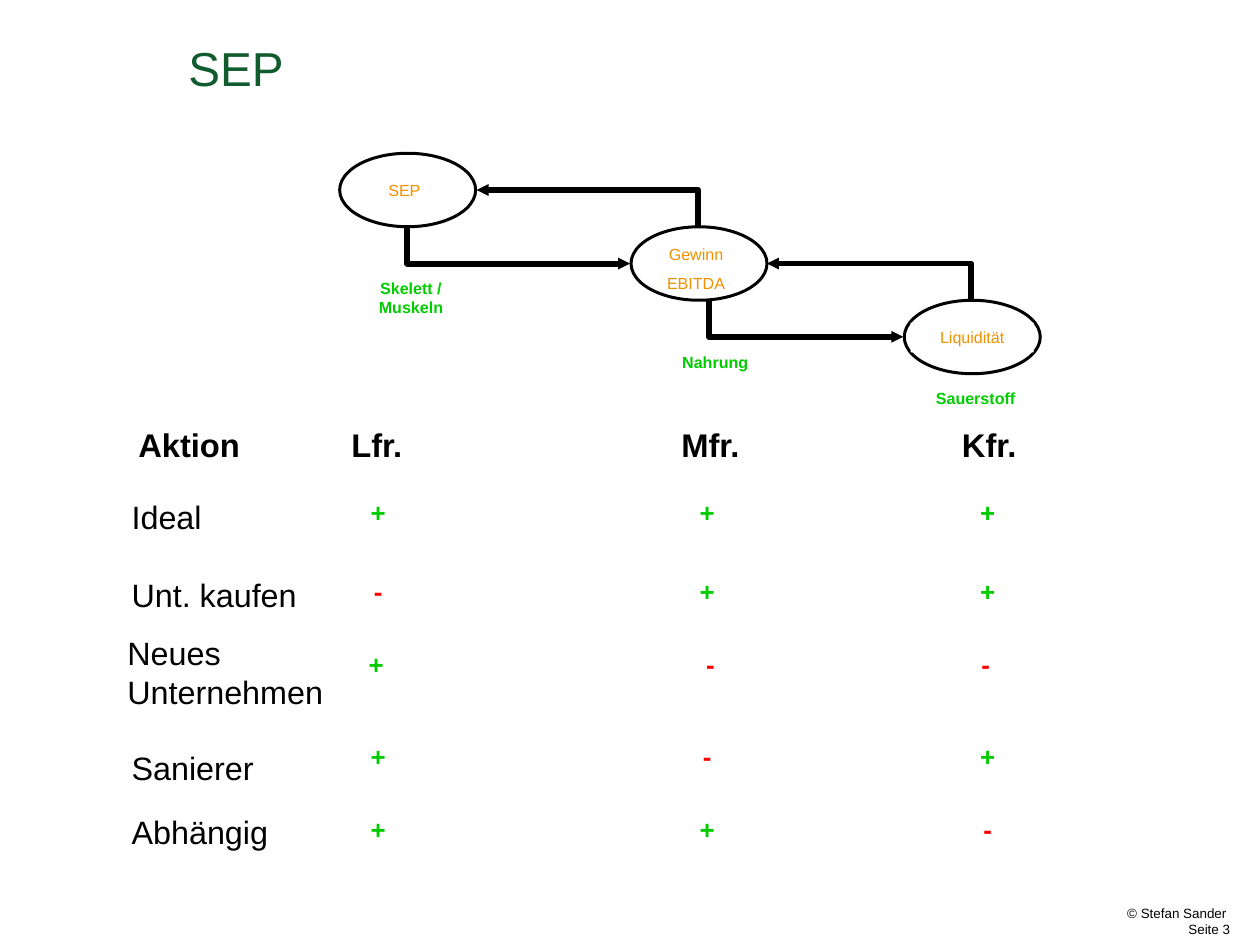
import pptx
import pptx.util
import pptx.dml.color
import pptx.enum.shapes
import pptx.enum.text
import pptx.oxml
import pptx.oxml.ns
import lxml.etree

Align = pptx.enum.text.PP_ALIGN
Kind = pptx.enum.shapes.MSO_SHAPE
qn = pptx.oxml.ns.qn

BLACK, WHITE = "000000", "FFFFFF"
GREEN, RED, ORANGE, PINE = "00CC00", "FF0000", "EF9100", "115C2E"


def paint(text):
    return pptx.dml.color.RGBColor.from_string(text)


class Sheet:
    font = "Arial"
    unit = 0.245

    def __init__(self, deck):
        self.slide = deck.slides.add_slide(deck.slide_layouts[5])
        self.shapes = self.slide.shapes

    def grid(self, *cells):
        return [pptx.util.Inches(cell * self.unit) for cell in cells]

    def label(self, frame, words, size, color, bold=False, align=Align.LEFT, gap=0, inset=None):
        frame.text = words
        frame.word_wrap = True
        frame.vertical_anchor = pptx.enum.text.MSO_ANCHOR.TOP
        if inset is not None:
            frame.margin_left = frame.margin_right = inset
            frame.margin_top = frame.margin_bottom = inset
        for rank, para in enumerate(frame.paragraphs):
            para.alignment = align
            para.space_before = pptx.util.Pt(gap if rank else 0)
            for run in para.runs:
                run.font.name = self.font
                run.font.size = pptx.util.Pt(size)
                run.font.bold = bold
                run.font.color.rgb = paint(color)

    def title(self, words, *area):
        head = self.shapes.title
        head.left, head.top, head.width, head.height = self.grid(*area)
        self.label(head.text_frame, words, 32, PINE, inset=0)
        head.text_frame.paragraphs[0].line_spacing = 0.85

    def text(self, words, area, size, color, fill=None, **look):
        box = self.shapes.add_textbox(*self.grid(*area))
        if fill:
            box.fill.solid()
            box.fill.fore_color.rgb = paint(fill)
        self.label(box.text_frame, words, size, color, **look)

    def oval(self, *area):
        ring = self.shapes.add_shape(Kind.OVAL, *self.grid(*area))
        ring.shadow.inherit = False
        ring.fill.background()
        ring.line.color.rgb = paint(BLACK)
        ring.line.width = pptx.util.Pt(2)

    def arrow(self, *ends):
        bend = pptx.enum.shapes.MSO_CONNECTOR.ELBOW
        link = self.shapes.add_connector(bend, *self.grid(*ends))
        link.line.color.rgb = paint(BLACK)
        link.line.width = pptx.util.Pt(4)
        props = link._element.spPr
        shape = props.find(qn("a:prstGeom"))
        guides = shape.find(qn("a:avLst"))
        if guides is None:
            guides = lxml.etree.SubElement(shape, qn("a:avLst"))
        lxml.etree.SubElement(guides, qn("a:gd"), name="adj1", fmla="val 0")
        line = props.find(qn("a:ln"))
        lxml.etree.SubElement(line, qn("a:tailEnd"), type="triangle", w="sm", len="sm")
        lxml.etree.SubElement(props, qn("a:effectLst"))

    def table(self, words, left, top, widths, height):
        area = self.grid(left, top, sum(widths), height)
        table = self.shapes.add_table(1, len(words), *area).table
        table.first_row = table.horz_banding = False
        for col, (word, width) in enumerate(zip(words, self.grid(*widths))):
            table.columns[col].width = width
            cell = table.cell(0, col)
            cell.fill.background()
            cell.margin_left = cell.margin_right = pptx.util.Inches(0.11)
            self.label(cell.text_frame, word, 22, BLACK, bold=True)


def main():
    deck = pptx.Presentation()
    deck.slide_width = pptx.util.Inches(11.76)
    deck.slide_height = pptx.util.Inches(8.82)
    page = Sheet(deck)
    page.title("SEP", 7.18, 1.8, 38.94, 4.33)

    for step, left in enumerate((12.94, 24.04, 34.45)):
        page.oval(left, 5.84 + 2.8 * step, 5.18, 2.8)

    names = (
        ("SEP", (13.67, 6.69, 3.47, 1.14), None),
        ("Gewinn\nEBITDA", (24.78, 9.1, 3.47, 2.29), None),
        ("Liquidität", (34.69, 12.29, 4.69, 1.14), WHITE),
    )
    for words, area, fill in names:
        page.text(words, area, 10.8, ORANGE, fill, align=Align.CENTER, gap=6.4)

    for ends in (
        (37, 11.43, 29.22, 10.04),
        (26.61, 8.64, 18.16, 7.24),
        (15.51, 8.64, 24, 10.04),
        (27, 11.43, 34.41, 12.83),
    ):
        page.arrow(*ends)

    for words, left, top, height in (
        ("Skelett / Muskeln", 12.94, 10.41, 1.92),
        ("Nahrung", 24.53, 13.22, 1.14),
        ("Sauerstoff", 34.45, 14.61, 1.14),
    ):
        area = (left, top, 5.43, height)
        page.text(words, area, 10.8, GREEN, bold=True, align=Align.CENTER)

    page.table(("Aktion", "Lfr.", "Mfr.", "Kfr."), 4.82, 16.08, (8.12, 12.57, 10.69, 7.02), 2.65)

    even = (12.94, 25.47, 36.16)
    rows = (
        ("Ideal", 4.61, 18.73, "+++", 18.73, even),
        ("Unt. kaufen", 4.61, 21.71, "-++", 21.71, even),
        ("Neues\nUnternehmen", 4.45, 23.92, "+--", 24.49, (12.86, 25.59, 36.08)),
        ("Sanierer", 4.61, 28.29, "+-+", 28, even),
        ("Abhängig", 4.61, 30.73, "++-", 30.78, even),
    )
    for words, left, top, signs, level, spots in rows:
        height = 1.92 + 1.47 * words.count("\n")
        page.text(words, (left, top, 9.63, height), 21.7, BLACK)
        for sign, spot in zip(signs, spots):
            color = GREEN if sign == "+" else RED
            area = (spot, level, 2.94, 1.59)
            page.text(sign, area, 17.4, color, bold=True, align=Align.CENTER)

    page.text("© Stefan Sander \nSeite 3", (19.51, 34.49, 27.35, 1.22), 9, BLACK,
              align=Align.RIGHT, inset=0)
    deck.save("out.pptx")


if __name__ == "__main__":
    main()
